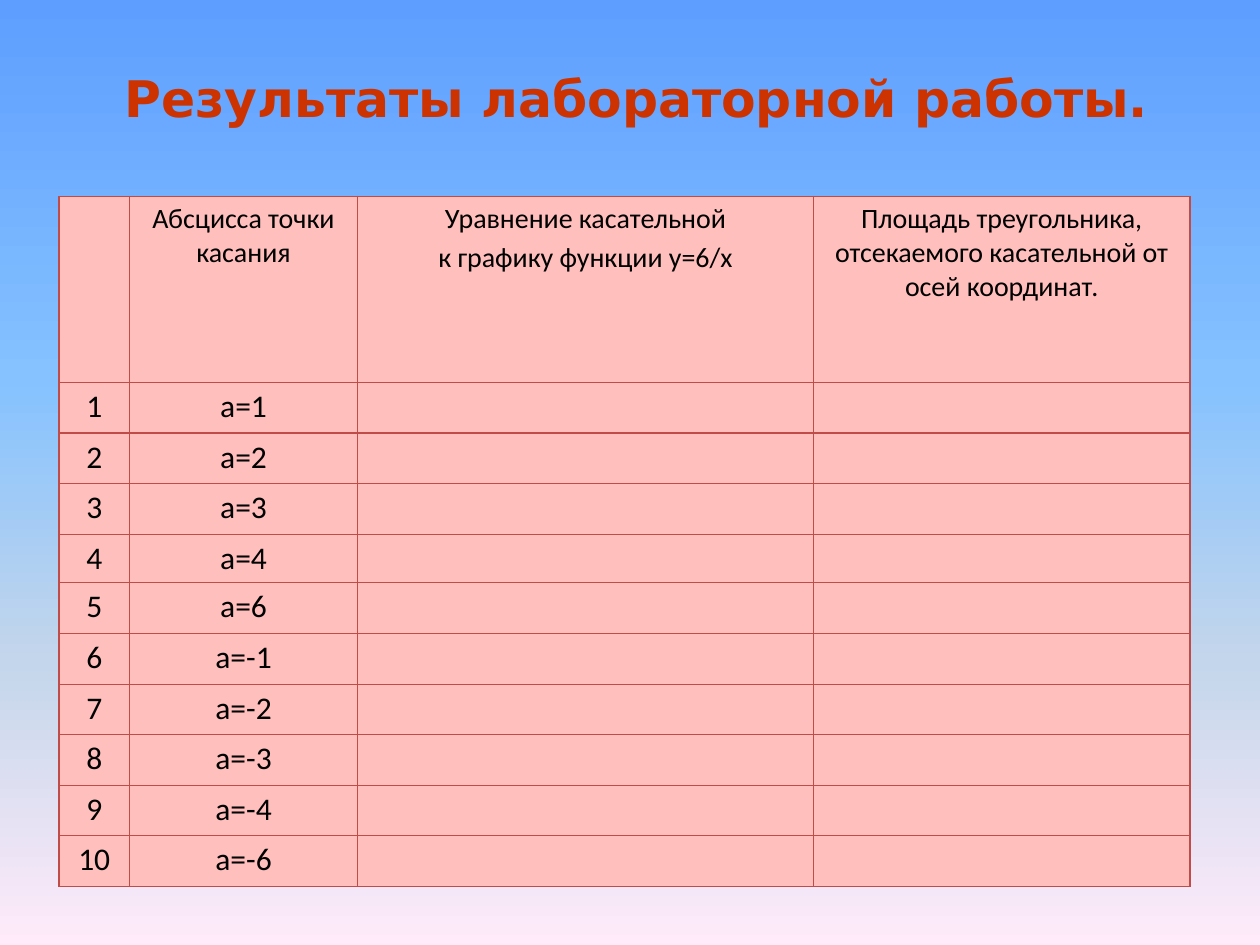
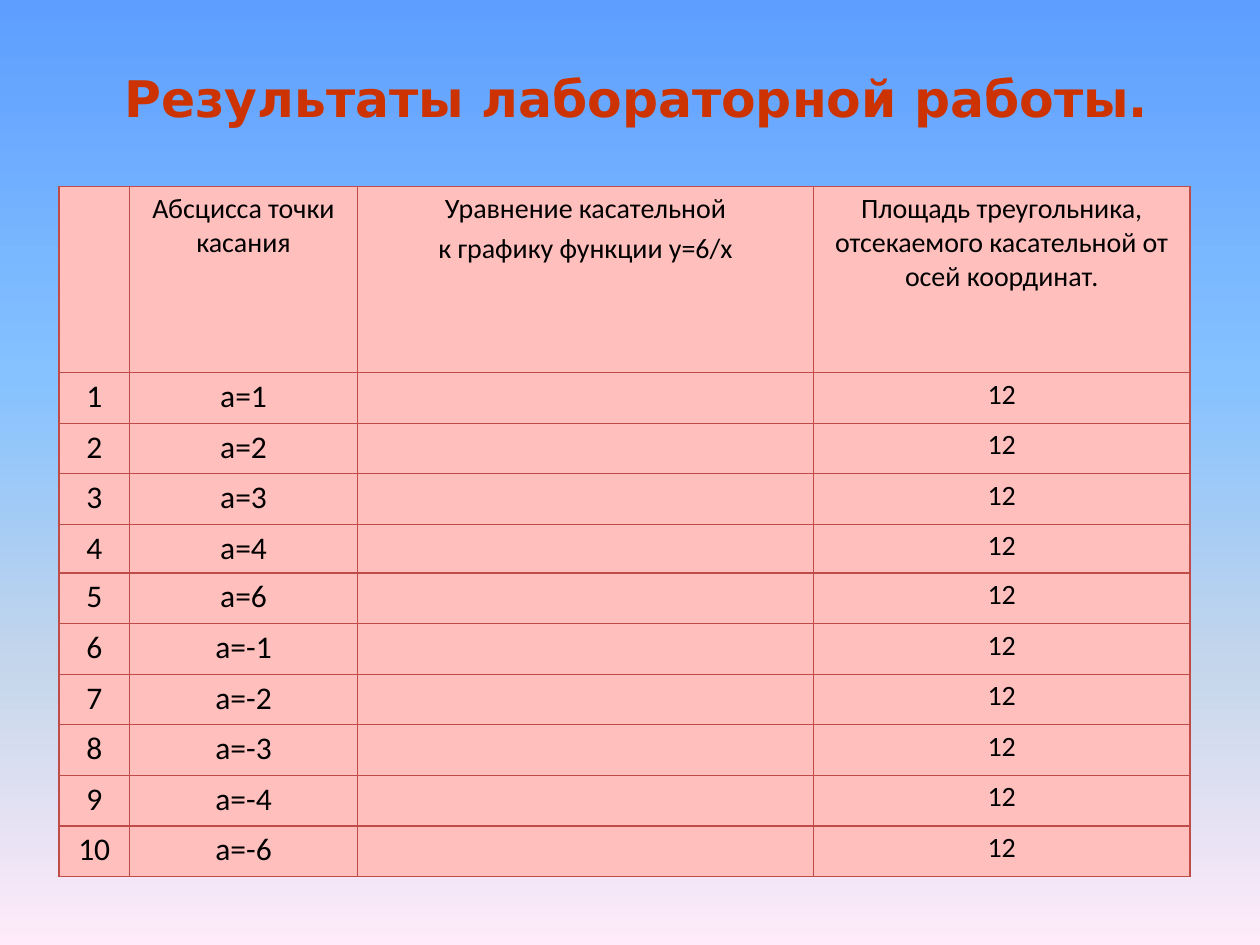
from dataclasses import dataclass

from lxml import etree
from pptx import Presentation
from pptx.dml.color import RGBColor
from pptx.enum.text import MSO_ANCHOR, PP_ALIGN
from pptx.oxml.ns import qn
from pptx.util import Cm, Pt

CENTER = PP_ALIGN.CENTER
MIDDLE = MSO_ANCHOR.MIDDLE

TITLE = "Результаты лабораторной работы."
HEADERS = [
    [],
    ["Абсцисса точки касания"],
    ["Уравнение касательной", "к графику функции у=6/x"],
    ["Площадь треугольника, отсекаемого касательной от осей координат."],
]
ABSCISSAS = [1, 2, 3, 4, 6, -1, -2, -3, -4, -6]
SLIDES = [
    {"table_top": 3.96, "area": None},
    {"table_top": 3.76, "area": "12"},
]

TITLE_BOX = (1.4, 0.58, 22.86, 2.77)
TABLE_LEFT = 1.19
COL_WIDTHS = [1.42, 4.6, 9.19, 7.59]
ROW_HEIGHTS = [3.75] + [1.02] * 4 + [0.98] + [1.02] * 5
ROW_HEIGHTS[4], ROW_HEIGHTS[5] = ROW_HEIGHTS[5], ROW_HEIGHTS[4]
CELL_MARGIN = 0.1


@dataclass(frozen=True)
class Theme:
    background: tuple = ((0, "5E9EFF"), (40, "85C2FF"), (70, "C4D6EB"), (100, "FFEBFA"))
    title_color: str = "CC3300"
    text_color: str = "000000"
    cell_fill: str = "FFBFBD"
    border: str = "BF4C48"
    border_width: float = 0.75
    title_font: str = "DejaVu Sans"
    body_font: str = "Calibri"
    title_size: float = 28.8
    small_size: float = 16
    row_size: float = 18
    space_before: float = 3.2


THEME = Theme()


def paint_background(master):
    fill = master.background.fill
    fill.gradient()
    fill.gradient_angle = 270
    stops = master.element.find(".//" + qn("a:gsLst"))
    for stop in list(stops):
        stops.remove(stop)
    for pos, color in THEME.background:
        gs = etree.SubElement(stops, qn("a:gs"), pos=str(pos * 1000))
        etree.SubElement(gs, qn("a:srgbClr"), val=color)


def write(tf, lines, font, size, color, bold=False):
    for i, line in enumerate(lines):
        p = tf.add_paragraph() if i else tf.paragraphs[0]
        p.alignment = CENTER
        if i:
            p.space_before = Pt(THEME.space_before)
        r = p.add_run()
        r.text = line
        r.font.name = font
        r.font.size = Pt(size)
        r.font.bold = bold
        r.font.color.rgb = RGBColor.from_string(color)


def add_title(s):
    sp = s.shapes.add_textbox(*map(Cm, TITLE_BOX))
    tf = sp.text_frame
    tf.word_wrap = True
    tf.vertical_anchor = MIDDLE
    write(tf, [TITLE], THEME.title_font, THEME.title_size, THEME.title_color, True)


def style_cell(cell):
    cell.margin_left = cell.margin_right = Cm(CELL_MARGIN)
    cell.margin_top = cell.margin_bottom = Cm(CELL_MARGIN)
    cell.fill.solid()
    cell.fill.fore_color.rgb = RGBColor.from_string(THEME.cell_fill)
    tc_pr = cell._tc.get_or_add_tcPr()
    for i, side in enumerate(("a:lnL", "a:lnR", "a:lnT", "a:lnB")):
        ln = etree.Element(qn(side), w=str(Pt(THEME.border_width)))
        solid = etree.SubElement(ln, qn("a:solidFill"))
        etree.SubElement(solid, qn("a:srgbClr"), val=THEME.border)
        tc_pr.insert(i, ln)


def table_rows(area):
    areas = [area] if area else []
    rows = [[(lines, THEME.small_size) for lines in HEADERS]]
    for number, a in enumerate(ABSCISSAS, 1):
        rows.append([
            ([str(number)], THEME.row_size),
            ([f"а={a}"], THEME.row_size),
            ([], THEME.row_size),
            (areas, THEME.small_size),
        ])
    return rows


def add_results(s, table_top, area):
    rows = table_rows(area)
    table = s.shapes.add_table(
        len(rows), len(COL_WIDTHS), Cm(TABLE_LEFT), Cm(table_top),
        Cm(sum(COL_WIDTHS)), Cm(sum(ROW_HEIGHTS))).table
    table.first_row = table.horz_banding = False
    for col, width in zip(table.columns, COL_WIDTHS):
        col.width = Cm(width)
    for row, height, values in zip(table.rows, ROW_HEIGHTS, rows):
        row.height = Cm(height)
        for cell, (lines, size) in zip(row.cells, values):
            style_cell(cell)
            write(cell.text_frame, lines, THEME.body_font, size, THEME.text_color)


def main():
    prs = Presentation()
    prs.slide_width, prs.slide_height = Cm(25.4), Cm(19.05)
    paint_background(prs.slide_master)
    for content in SLIDES:
        s = prs.slides.add_slide(prs.slide_layouts[6])
        add_title(s)
        add_results(s, **content)
    prs.save("out.pptx")


if __name__ == "__main__":
    main()
